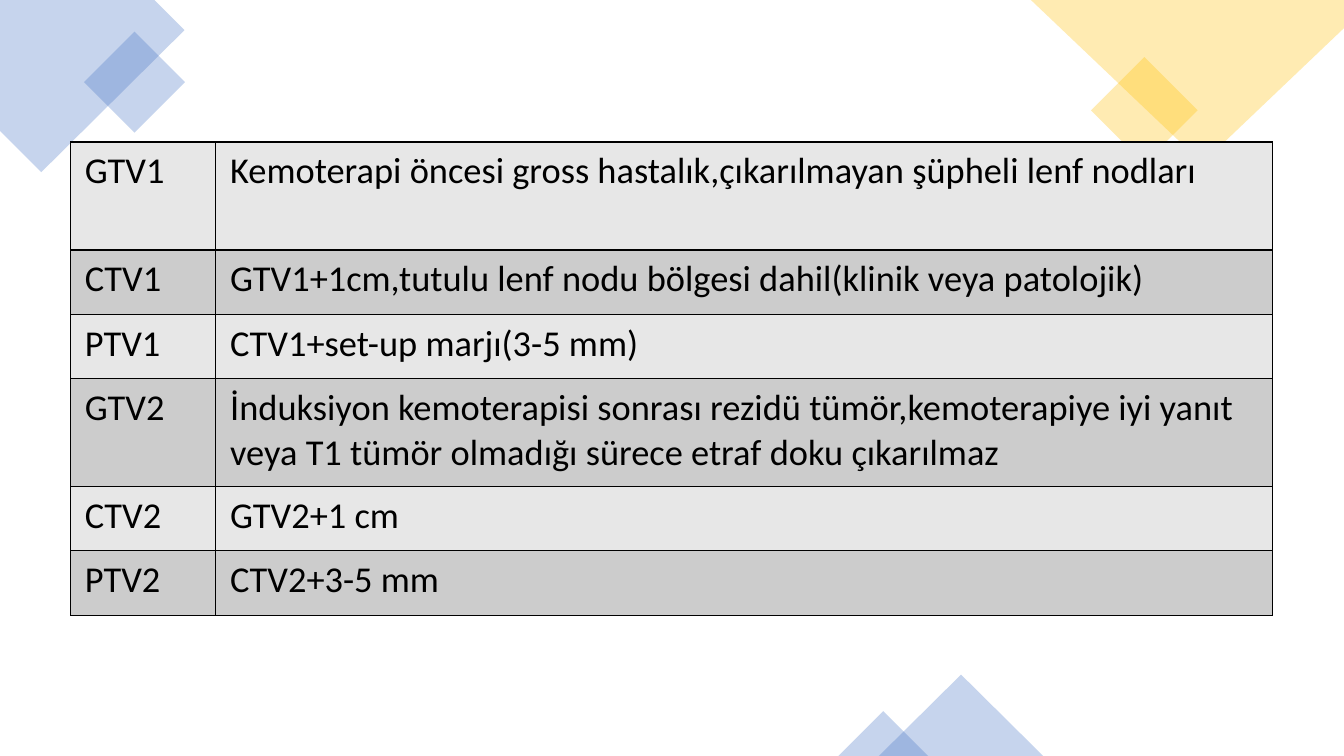
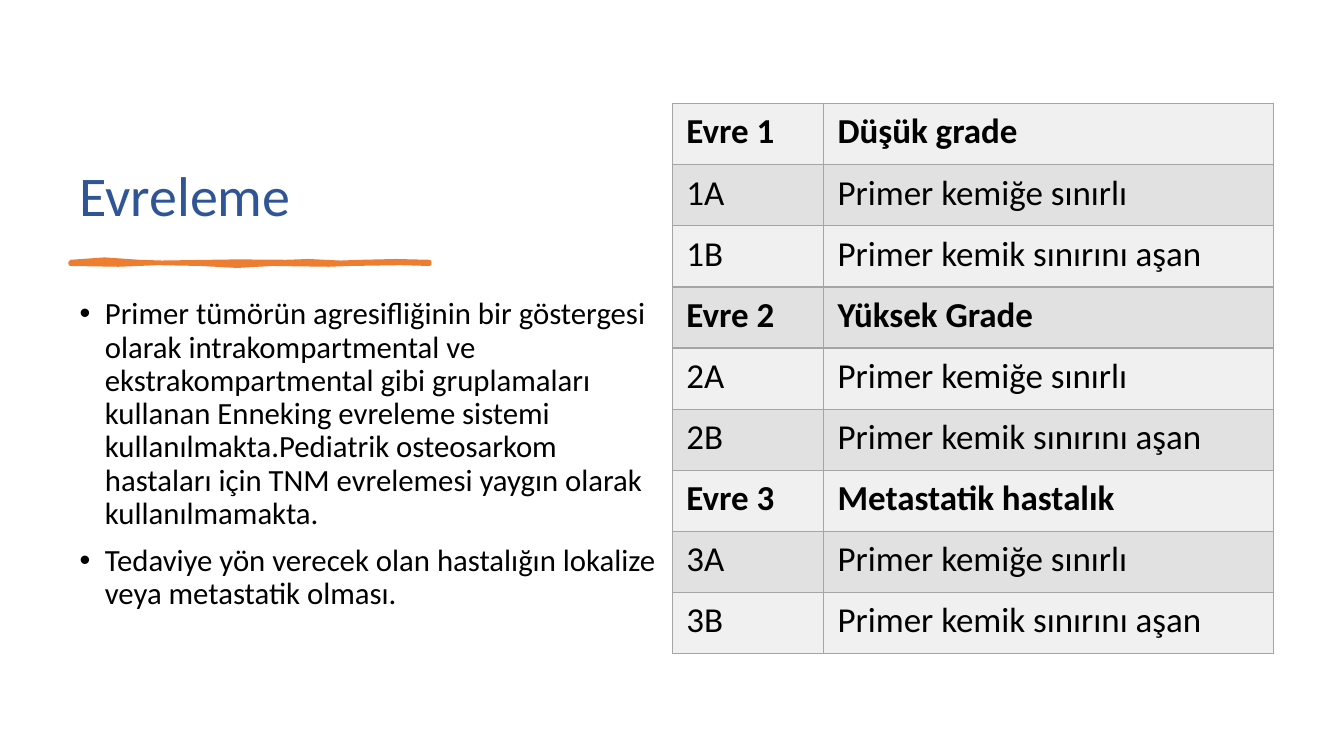
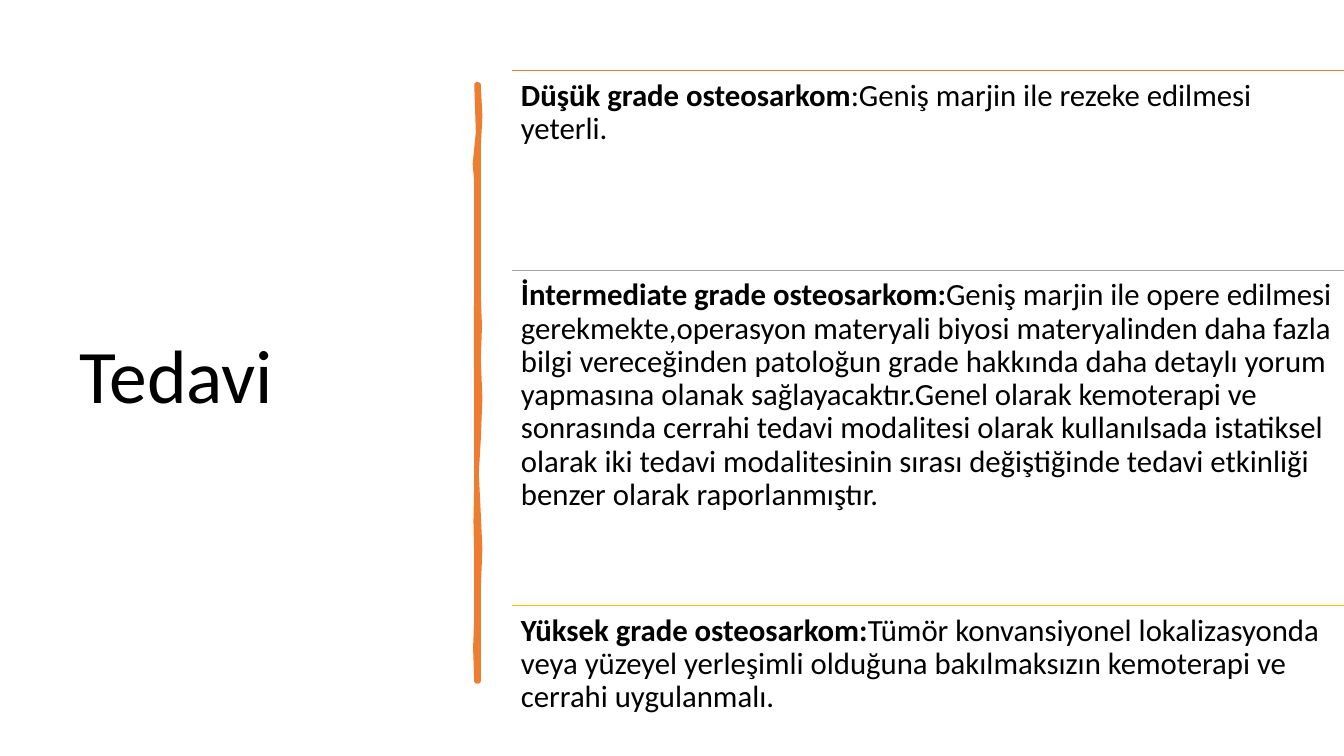
from lxml.etree import SubElement
from pptx import Presentation
from pptx.dml.color import RGBColor
from pptx.enum.shapes import MSO_CONNECTOR, MSO_SHAPE
from pptx.enum.text import MSO_ANCHOR, MSO_AUTO_SIZE, PP_ALIGN
from pptx.oxml.ns import qn
from pptx.util import Cm, Pt

BLUE, ORANGE, YELLOW, GREY = "4472C4", "ED7D31", "FFC000", "A5A5A5"
BLACK, TITLE_BLUE = "000000", "2F5597"
BLANK, TITLE_BODY, TITLE_ONLY = 6, 1, 5


def rgb(color):
    """Turn a hex string into a colour."""
    return RGBColor.from_string(color)


class Deck:
    """Hold the shared style and the slide being built."""

    font_name = "Calibri"
    line_spacing = 0.9
    text_size = 22

    def __init__(self):
        self.presentation = Presentation()
        self.presentation.slide_width = Cm(33.87)
        self.presentation.slide_height = Cm(19.05)
        self.slide = None

    def new_slide(self, layout):
        """Start a slide on the given layout."""
        self.slide = self.presentation.slides.add_slide(self.presentation.slide_layouts[layout])

    def style(self, paragraph, size, color=BLACK, bold=None):
        """Set the font of a whole paragraph."""
        font = paragraph.font
        font.name, font.size, font.bold = self.font_name, Pt(size), bold
        font.color.rgb = rgb(color)

    def place(self, shape, box):
        """Move and size a shape."""
        shape.left, shape.top, shape.width, shape.height = map(Cm, box)

    def paint(self, shape, color, opacity=None, line_width=None):
        """Fill a shape, with optional transparency and outline."""
        shape.shadow.inherit = False
        shape.fill.solid()
        shape.fill.fore_color.rgb = rgb(color)
        if opacity:
            for element in shape.fill._xPr.iter(qn("a:srgbClr")):
                SubElement(element, qn("a:alpha"), val=str(opacity * 1000))
        if line_width:
            shape.line.color.rgb = rgb(color)
            shape.line.width = Pt(line_width)
        else:
            shape.line.fill.background()

    def title(self, text, box, size, color, anchor):
        """Fill the title placeholder."""
        shape = self.slide.shapes.title
        self.place(shape, box)
        frame = shape.text_frame
        frame.text = text
        frame.word_wrap, frame.auto_size = True, MSO_AUTO_SIZE.NONE
        frame.vertical_anchor = anchor
        paragraph = frame.paragraphs[0]
        paragraph.alignment, paragraph.line_spacing = PP_ALIGN.LEFT, self.line_spacing
        self.style(paragraph, size, color)

    def bullets(self, items, box):
        """Fill the body placeholder with a bulleted list."""
        shape = self.slide.placeholders[1]
        self.place(shape, box)
        frame = shape.text_frame
        frame.text = "\n".join(items)
        frame.word_wrap, frame.auto_size = True, MSO_AUTO_SIZE.NONE
        for paragraph in frame.paragraphs:
            paragraph.line_spacing, paragraph.space_before = self.line_spacing, Pt(10)
            properties = paragraph._p.get_or_add_pPr()
            properties.set("marL", str(Cm(0.64)))
            properties.set("indent", str(-Cm(0.64)))
            self.style(paragraph, self.text_size)

    def table(self, rows, left, top, widths, heights, size, fills, border, is_bold):
        """Add a banded table with a border round every cell."""
        shape = self.slide.shapes.add_table(
            len(rows), len(widths), Cm(left), Cm(top), Cm(sum(widths)), Cm(sum(heights)))
        table = shape.table
        table.first_row = table.horz_banding = False
        for column, width in zip(table.columns, widths):
            column.width = Cm(width)
        for index, (row, height, texts) in enumerate(zip(table.rows, heights, rows)):
            row.height = Cm(height)
            for cell, text in zip(row.cells, texts):
                cell.text = text
                cell.margin_left = cell.margin_right = Cm(0.36)
                cell.margin_top = cell.margin_bottom = Cm(0.18)
                self.style(cell.text_frame.paragraphs[0], size, bold=is_bold(index))
                self.borders(cell, border)
                cell.fill.solid()
                cell.fill.fore_color.rgb = rgb(fills[index % 2])

    def borders(self, cell, color):
        """Draw the four borders of a cell."""
        properties = cell._tc.get_or_add_tcPr()
        for side in ("a:lnL", "a:lnR", "a:lnT", "a:lnB"):
            line = SubElement(properties, qn(side), w=str(Pt(1)))
            SubElement(SubElement(line, qn("a:solidFill")), qn("a:srgbClr"), val=color)

    def preset(self, kind, box, color, rotation=0):
        """Add a translucent preset shape."""
        shape = self.slide.shapes.add_shape(kind, *map(Cm, box))
        shape.rotation = rotation
        self.paint(shape, color, opacity=30)

    def outline(self, points, color, **look):
        """Add a closed freeform through the points."""
        first, *others = [(Cm(x), Cm(y)) for x, y in points]
        builder = self.slide.shapes.build_freeform(*first)
        builder.add_line_segments(others, close=True)
        self.paint(builder.convert_to_shape(), color, **look)

    def brush(self, left, top, near, far, line_width, vertical=False):
        """Add a brush stroke between two wavy edges of (along, across) points."""
        edge = near + far[::-1]
        if vertical:
            edge = [(across, along) for along, across in edge]
        self.outline([(left + x, top + y) for x, y in edge], ORANGE, line_width=line_width)

    def rule(self, left, top, width, color):
        """Add a horizontal line."""
        line = self.slide.shapes.add_connector(
            MSO_CONNECTOR.STRAIGHT, Cm(left), Cm(top), Cm(left + width), Cm(top))
        line.line.color.rgb = rgb(color)
        line.line.width = Pt(1)
        SubElement(line._element.spPr, qn("a:effectLst"))

    def labelled_text(self, label, text, box):
        """Add a text box that opens with a bold label."""
        frame = self.slide.shapes.add_textbox(*map(Cm, box)).text_frame
        frame.word_wrap = True
        frame.margin_left = frame.margin_right = Cm(0.23)
        frame.margin_top = frame.margin_bottom = Cm(0.23)
        paragraph = frame.paragraphs[0]
        paragraph.line_spacing = self.line_spacing
        self.style(paragraph, self.text_size)
        for content, bold in ((label, True), (text, False)):
            run = paragraph.add_run()
            run.text, run.font.bold = content, bold


def volumes_slide(deck):
    """Build the target volume table."""
    deck.new_slide(BLANK)
    deck.outline([(0, 0), (3.89, 0), (4.65, 0.76), (1.04, 4.34), (0, 3.3)], BLUE, opacity=30)
    deck.preset(MSO_SHAPE.RECTANGLE, (2.49, 1.17, 1.8, 1.8), BLUE, 315)
    deck.preset(MSO_SHAPE.RECTANGLE, (27.89, 1.83, 1.9, 1.9), YELLOW, 315)
    deck.outline([(25.98, 0), (33.87, 0), (33.87, 0.71), (30.3, 4.11)], YELLOW, opacity=30)
    deck.preset(MSO_SHAPE.ISOSCELES_TRIANGLE, (22.15, 17, 4.14, 2.05), BLUE)
    deck.preset(MSO_SHAPE.ISOSCELES_TRIANGLE, (21.13, 17.92, 2.26, 1.13), BLUE)
    volumes = [
        ("GTV1", "Kemoterapi öncesi gross hastalık,çıkarılmayan şüpheli lenf nodları"),
        ("CTV1", "GTV1+1cm,tutulu lenf nodu bölgesi dahil(klinik veya patolojik)"),
        ("PTV1", "CTV1+set-up marjı(3-5 mm)"),
        ("GTV2", "İnduksiyon kemoterapisi sonrası rezidü tümör,kemoterapiye iyi yanıt "
                 "veya T1 tümör olmadığı sürece etraf doku çıkarılmaz"),
        ("CTV2", "GTV2+1 cm"),
        ("PTV2", "CTV2+3-5 mm"),
    ]
    deck.table(volumes, 1.78, 3.58, (3.66, 26.63), (2.72, 1.62, 1.62) * 2, 26,
               ("E7E7E7", "CCCCCC"), BLACK, lambda index: False)


def staging_slide(deck):
    """Build the staging list and table."""
    deck.new_slide(TITLE_BODY)
    deck.title("Evreleme", (1.75, 3.91, 9.5, 1.98), 40, TITLE_BLUE, MSO_ANCHOR.BOTTOM)
    upper = [(0, 0), (0.86, -0.06), (1.73, 0), (2.3, 0.02), (3.53, 0), (4.2, -0.01), (5.44, 0),
             (6, -0.02), (6.8, 0.02), (7.34, 0), (8.2, -0.02), (9.04, 0)]
    lower = [(0, 0.05), (1.2, 0.07), (2.2, 0.03), (3.28, 0.05), (4.2, 0.1), (5.08, 0.05),
             (6.5, 0.07), (7.06, 0.05), (8.3, 0.03), (9.04, 0.05)]
    deck.brush(1.78, 6.6, upper, lower, 3)
    deck.bullets([
        "Primer tümörün agresifliğinin bir göstergesi olarak intrakompartmental ve "
        "ekstrakompartmental gibi gruplamaları kullanan Enneking evreleme sistemi "
        "kullanılmakta.Pediatrik osteosarkom hastaları için TNM evrelemesi yaygın olarak "
        "kullanılmamakta.",
        "Tedaviye yön verecek olan hastalığın lokalize veya metastatik olması.",
    ], (1.75, 7.39, 15.16, 11.66))
    stages = []
    for number, grade in enumerate(("Düşük grade", "Yüksek Grade", "Metastatik hastalık"), 1):
        stages += [(f"Evre {number}", grade),
                   (f"{number}A", "Primer kemiğe sınırlı"),
                   (f"{number}B", "Primer kemik sınırını aşan")]
    deck.table(stages, 16.94, 2.61, (3.81, 11.35), [1.54] * len(stages), 25,
               ("F0F0F0", "E1E1E1"), GREY, lambda index: index % 3 == 0)


def treatment_slide(deck):
    """Build the treatment overview by grade."""
    deck.new_slide(TITLE_ONLY)
    deck.title("Tedavi", (1.75, 1.78, 9.5, 15.52), 54, BLACK, MSO_ANCHOR.MIDDLE)
    right = [(0, 0), (0.8, 0.04), (1.57, 0), (3.61, 0), (5.33, 0), (6.1, 0.03), (6.91, 0),
             (7.9, 0.04), (8.94, 0), (9.8, -0.05), (10.82, 0), (11.7, 0.04), (12.7, 0), (15.04, 0)]
    left = [(0, -0.05), (1.2, -0.01), (2, -0.09), (2.46, -0.05), (4.22, -0.05), (6.38, -0.06),
            (8.41, -0.05), (9.98, -0.05), (11, -0.07), (12.01, -0.05), (13.44, -0.05),
            (14.2, -0.08), (15.04, -0.05)]
    deck.brush(12.06, 2.13, right, left, 3.25, vertical=True)
    grades = [
        (1.78, 5.03, ORANGE, "Düşük grade osteosarkom",
         ":Geniş marjin ile rezeke edilmesi yeterli."),
        (6.81, 8.44, GREY, "İntermediate grade osteosarkom:",
         "Geniş marjin ile opere edilmesi gerekmekte,operasyon materyali biyosi materyalinden "
         "daha fazla bilgi vereceğinden patoloğun grade hakkında daha detaylı yorum yapmasına "
         "olanak sağlayacaktır.Genel olarak kemoterapi ve sonrasında cerrahi tedavi modalitesi "
         "olarak kullanılsada istatiksel olarak iki tedavi modalitesinin sırası değiştiğinde "
         "tedavi etkinliği benzer olarak raporlanmıştır."),
        (15.26, 3.1, YELLOW, "Yüksek grade osteosarkom:",
         "Tümör konvansiyonel lokalizasyonda veya yüzeyel yerleşimli olduğuna bakılmaksızın "
         "kemoterapi ve cerrahi uygulanmalı."),
    ]
    for top, height, color, label, text in grades:
        deck.rule(12.9, top, 20.96, color)
        deck.labelled_text(label, text, (12.9, top, 20.96, height))


def main():
    """Build and save the presentation."""
    deck = Deck()
    volumes_slide(deck)
    staging_slide(deck)
    treatment_slide(deck)
    deck.presentation.save("out.pptx")


if __name__ == "__main__":
    main()
